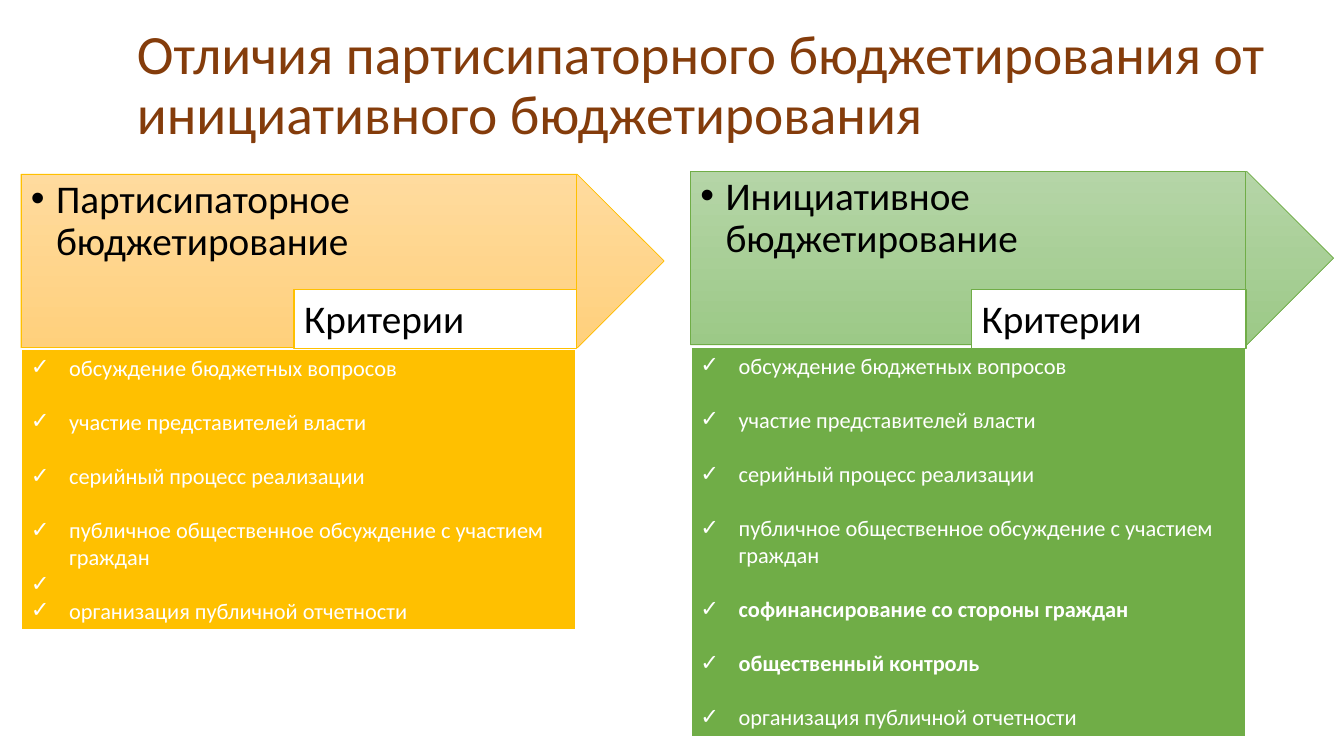
from lxml import etree
from pptx import Presentation
from pptx import util as u
from pptx.dml.color import RGBColor
from pptx.enum import shapes, text
from pptx.oxml.ns import qn

# Slide size and a grid of 64 columns by 36 rows
WIDTH, HEIGHT = u.Inches(13.333), u.Inches(7.5)
COLUMN, ROW = WIDTH / 64, HEIGHT / 36
BAR_COLUMNS, ARROW_COLUMNS, ARROW_ROWS = 26.45, 30.62, 8.26
FONT = "Calibri"
LINE_GAP = 19.5

COLORS = {
    "title": "843C0B", "black": "000000", "white": "FFFFFF",
    "gold": "FFC000", "gold_top": "FFDB9E", "gold_bottom": "FFD07C",
    "green": "70AD47", "green_top": "B5D5A7", "green_bottom": "9CC987",
}

# Each criterion: wording, bold, gap above
SHARED = [
    ("обсуждение бюджетных вопросов", False, False),
    ("участие представителей власти", False, True),
    ("серийный процесс реализации", False, True),
    ("публичное общественное обсуждение с участием граждан", False, True),
]
PANELS = [
    dict(heading="Партисипаторное бюджетирование", color="gold", left=1,
         arrow_top=8.3, list_top=16.61, list_rows=13.39, label_columns=13.44,
         criteria=SHARED + [
             (" ", False, False),
             ("организация публичной отчетности", False, False)]),
    dict(heading="Инициативное бюджетирование", color="green", left=32.88,
         arrow_top=8.16, list_top=16.51, list_rows=18.58, label_columns=13.06,
         criteria=SHARED + [
             ("софинансирование со стороны граждан", True, True),
             ("общественный контроль", True, True),
             ("организация публичной отчетности", False, True)]),
]


def rgb(name):
    return RGBColor.from_string(COLORS[name])


def place(left, top, columns, rows):
    return (u.Emu(round(left * COLUMN)), u.Emu(round(top * ROW)),
            u.Emu(round(columns * COLUMN)), u.Emu(round(rows * ROW)))


def add_block(page, kind, area, line, weight, fill=None, gradient=None):
    box = page.shapes.add_shape(kind, *place(*area))
    box.shadow.inherit = False
    if gradient:
        box.fill.gradient()
        box.fill.gradient_angle = 270
        for stop, name in zip(box.fill.gradient_stops, gradient):
            stop.color.rgb = rgb(name)
    else:
        box.fill.solid()
        box.fill.fore_color.rgb = rgb(fill)
    box.line.color.rgb = rgb(line)
    box.line.width = u.Pt(weight)
    box.text_frame.word_wrap = True
    box.text_frame.vertical_anchor = text.MSO_ANCHOR.TOP
    return box


def write(para, words, size, color, bold=False):
    para.text = words
    para.alignment = text.PP_ALIGN.LEFT
    for span in para.runs:
        span.font.name = FONT
        span.font.size = u.Pt(size)
        span.font.bold = bold
        span.font.color.rgb = rgb(color)


def add_bullet(para, sign, typeface, indent):
    properties = para._p.get_or_add_pPr()
    properties.set("marL", str(u.Inches(indent)))
    properties.set("indent", str(-u.Inches(indent)))
    etree.SubElement(properties, qn("a:buFont")).set("typeface", typeface)
    etree.SubElement(properties, qn("a:buChar")).set("char", sign)


def add_title(page, words):
    box = page.shapes.add_textbox(*place(6.05, 1.78, 57.45, 4.66))
    box.text_frame.word_wrap = True
    box.text_frame.vertical_anchor = text.MSO_ANCHOR.MIDDLE
    para = box.text_frame.paragraphs[0]
    write(para, words, 39.6, "title")
    para.line_spacing = 0.9


def add_heading(page, panel):
    color, left, top = panel["color"], panel["left"], panel["arrow_top"]
    gradient = (color + "_top", color + "_bottom")
    add_block(page, shapes.MSO_SHAPE.PENTAGON,
              (left, top, ARROW_COLUMNS, ARROW_ROWS), color, 0.5, gradient=gradient)
    bar = add_block(page, shapes.MSO_SHAPE.RECTANGLE,
                    (left, top, BAR_COLUMNS, ARROW_ROWS), color, 0.5, gradient=gradient)
    para = bar.text_frame.paragraphs[0]
    write(para, panel["heading"], 28, "black")
    para.line_spacing = 0.9
    para.space_before = u.Pt(10)
    add_bullet(para, "•", "Arial", 0.25)


def add_criteria(page, panel):
    box = add_block(page, shapes.MSO_SHAPE.RECTANGLE,
                    (panel["left"], panel["list_top"], BAR_COLUMNS, panel["list_rows"]),
                    "white", 1.5, fill=panel["color"])
    frame = box.text_frame
    for number, (words, bold, gap) in enumerate(panel["criteria"]):
        para = frame.add_paragraph() if number else frame.paragraphs[0]
        write(para, words, 16, "white", bold)
        para.space_before = u.Pt(LINE_GAP if gap else 0)
        add_bullet(para, "✓", FONT, 0.38)


def add_label(page, panel):
    columns = panel["label_columns"]
    left = panel["left"] + BAR_COLUMNS - columns
    box = add_block(page, shapes.MSO_SHAPE.RECTANGLE, (left, 13.78, columns, 2.83),
                    panel["color"], 1, fill="white")
    write(box.text_frame.paragraphs[0], "Критерии", 28, "black")


def main():
    deck = Presentation()
    deck.slide_width, deck.slide_height = WIDTH, HEIGHT
    page = deck.slides.add_slide(deck.slide_layouts[6])
    add_title(page, "Отличия партисипаторного бюджетирования от "
                    "инициативного бюджетирования")
    for panel in PANELS:
        add_heading(page, panel)
        add_criteria(page, panel)
        add_label(page, panel)
    deck.save("out.pptx")


if __name__ == "__main__":
    main()
